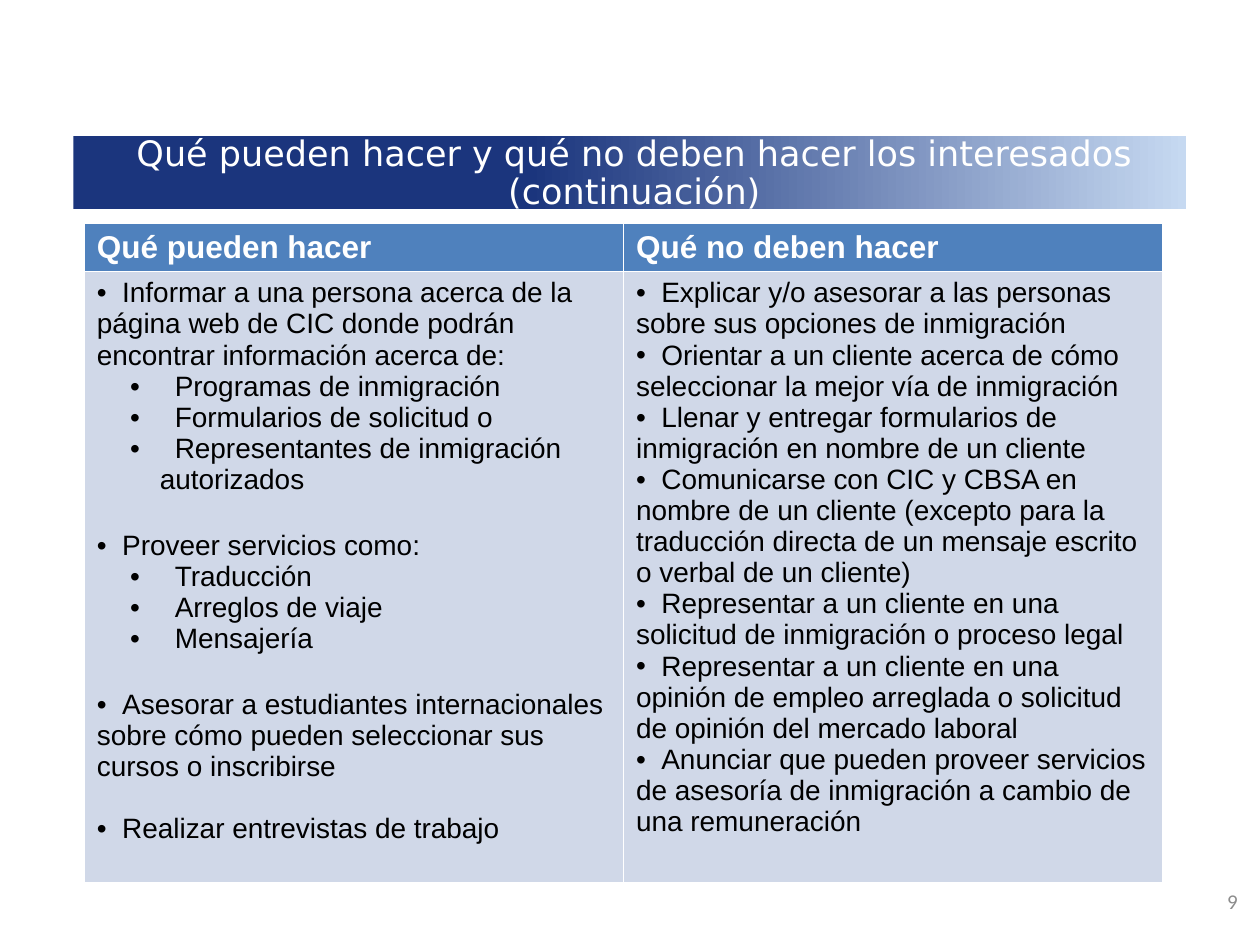
from dataclasses import dataclass

from lxml import etree
from pptx import Presentation
from pptx.dml.color import RGBColor
from pptx.enum.shapes import MSO_SHAPE
from pptx.enum.text import MSO_ANCHOR, PP_ALIGN
from pptx.oxml.ns import qn
from pptx.util import Cm, Pt

RECT = MSO_SHAPE.RECTANGLE
MIDDLE = MSO_ANCHOR.MIDDLE
CENTER, RIGHT = PP_ALIGN.CENTER, PP_ALIGN.RIGHT

NAVY = RGBColor(0x1B, 0x35, 0x7D)
PALE_BLUE = RGBColor(0xC6, 0xD9, 0xF1)
HEADER_BLUE = RGBColor(0x4F, 0x81, 0xBD)
BODY_BLUE = RGBColor(0xD0, 0xD8, 0xE8)
WHITE = RGBColor(0xFF, 0xFF, 0xFF)
BLACK = RGBColor(0, 0, 0)
GRAY = RGBColor(0x8C, 0x8C, 0x8C)


@dataclass
class Item:
    text: str
    level: int = 0
    before: float = 0


@dataclass
class Column:
    heading: str
    items: list[Item]


@dataclass
class Indent:
    left: float
    first: float
    tab: float


INDENTS = [Indent(0, 0, 0.51), Indent(1.27, -0.6, 1.57)]

COLUMNS = [
    Column("Qué pueden hacer", [
        Item("Informar a una persona acerca de la página web de CIC donde podrán "
             "encontrar información acerca de:"),
        Item("Programas de inmigración", 1),
        Item("Formularios de solicitud o", 1),
        Item("Representantes de inmigración autorizados", 1),
        Item("Proveer servicios como:", before=20),
        Item("Traducción", 1),
        Item("Arreglos de viaje", 1),
        Item("Mensajería", 1),
        Item("Asesorar a estudiantes internacionales sobre cómo pueden seleccionar "
             "sus cursos o inscribirse", before=19.5),
        Item("Realizar entrevistas de trabajo", before=18),
    ]),
    Column("Qué no deben hacer", [
        Item("Explicar y/o asesorar a las personas sobre sus opciones de inmigración"),
        Item("Orientar a un cliente acerca de cómo seleccionar la mejor vía de inmigración"),
        Item("Llenar y entregar formularios de inmigración en nombre de un cliente"),
        Item("Comunicarse con CIC y CBSA en nombre de un cliente (excepto para la "
             "traducción directa de un mensaje escrito o verbal de un cliente)"),
        Item("Representar a un cliente en una solicitud de inmigración o proceso legal"),
        Item("Representar a un cliente en una opinión de empleo arreglada o solicitud "
             "de opinión del mercado laboral"),
        Item("Anunciar que pueden proveer servicios de asesoría de inmigración a "
             "cambio de una remuneración"),
    ]),
]


def add_run(p, text: str, size: float, font: str, color: RGBColor, bold: bool = False) -> None:
    r = p.add_run()
    r.text = text
    r.font.size = Pt(size)
    r.font.name = font
    r.font.bold = bold
    r.font.color.rgb = color


def add_bullet(p, level: int) -> None:
    """Set the bullet, the indents and the tab stop where the text starts."""
    indent = INDENTS[level]
    p.level = level
    pPr = p._p.get_or_add_pPr()
    pPr.set("marL", str(Cm(indent.left)))
    pPr.set("indent", str(Cm(indent.first)))
    etree.SubElement(pPr, qn("a:buFont"), typeface="Arial")
    etree.SubElement(pPr, qn("a:buChar"), char="•")
    tabs = etree.SubElement(pPr, qn("a:tabLst"))
    etree.SubElement(tabs, qn("a:tab"), pos=str(Cm(indent.tab)), algn="l")


def fill_cell(cell, color: RGBColor) -> None:
    cell.fill.solid()
    cell.fill.fore_color.rgb = color


def add_column(header, body, column: Column) -> None:
    fill_cell(header, HEADER_BLUE)
    add_run(header.text_frame.paragraphs[0], column.heading, 18, "Arial", WHITE, True)
    fill_cell(body, BODY_BLUE)
    tf = body.text_frame
    for i, item in enumerate(column.items):
        p = tf.add_paragraph() if i else tf.paragraphs[0]
        add_bullet(p, item.level)
        if item.before:
            p.space_before = Pt(item.before)
        add_run(p, "\t" + item.text, 16, "Arial", BLACK)


def add_band(s) -> None:
    band = s.shapes.add_shape(RECT, Cm(1.48), Cm(2.74), Cm(22.43), Cm(1.48))
    band.shadow.inherit = False
    band.line.fill.background()
    band.fill.gradient()
    band.fill.gradient_angle = 0
    for stop, position, color in zip(band.fill.gradient_stops, (0.41, 1), (NAVY, PALE_BLUE)):
        stop.position = position
        stop.color.rgb = color
    s.shapes._spTree.insert(2, band._element)  # behind the title


def add_title(s) -> None:
    title = s.shapes.title
    title.left, title.top, title.width, title.height = Cm(1.45), Cm(2.64), Cm(22.68), Cm(1.7)
    tf = title.text_frame
    tf.vertical_anchor = MIDDLE
    p = tf.paragraphs[0]
    p.alignment = CENTER
    p.line_spacing = Pt(22)
    add_run(p, "Qué pueden hacer y qué no deben hacer los interesados (continuación)",
            20, "DejaVu Sans", WHITE)


def add_table(s) -> None:
    table = s.shapes.add_table(2, 2, Cm(1.7), Cm(4.5), Cm(21.74), Cm(13.3)).table
    table.rows[0].height = Cm(0.97)
    table.rows[1].height = Cm(12.33)
    for i, column in enumerate(COLUMNS):
        add_column(table.cell(0, i), table.cell(1, i), column)


def add_page_number(s) -> None:
    tf = s.shapes.add_textbox(Cm(22.86), Cm(17.65), Cm(2.34), Cm(1.02)).text_frame
    tf.word_wrap = True
    tf.vertical_anchor = MIDDLE
    p = tf.paragraphs[0]
    p.alignment = RIGHT
    add_run(p, "9", 12, "Calibri", GRAY)


def main() -> None:
    prs = Presentation()
    prs.slide_width, prs.slide_height = Cm(25.4), Cm(19.05)
    s = prs.slides.add_slide(prs.slide_layouts[5])
    add_band(s)
    add_table(s)
    add_title(s)
    add_page_number(s)
    prs.save("out.pptx")


if __name__ == "__main__":
    main()
